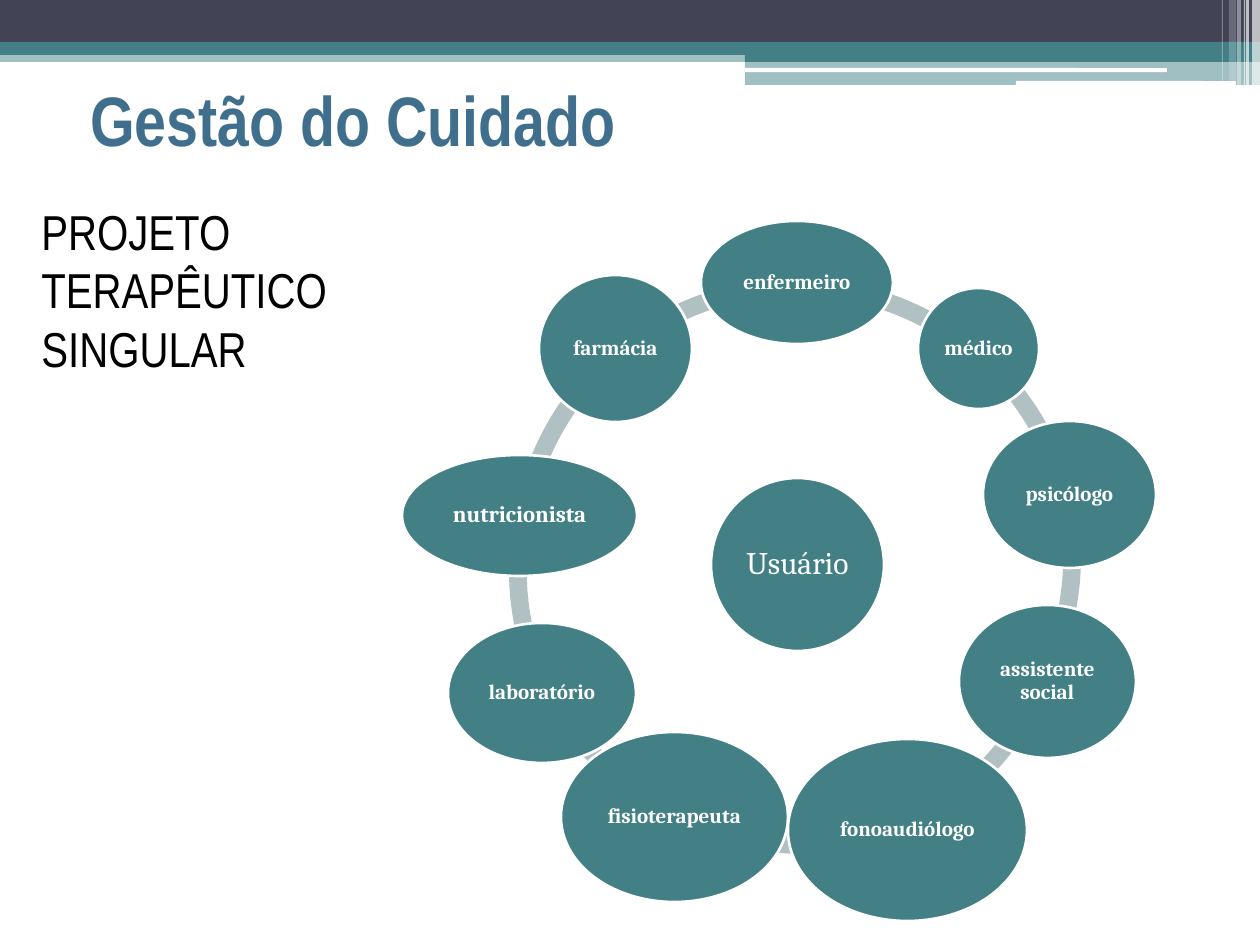
from lxml import etree
from pptx import Presentation
from pptx.dml.color import RGBColor
from pptx.enum import shapes, text
from pptx.oxml.ns import qn
from pptx.util import Pt

PX = 914400 / 126
W, H = 1260, 945
TEAL = RGBColor(0x43, 0x80, 0x86)
SLATE = RGBColor(0x42, 0x44, 0x56)
RING = RGBColor(0xB0, 0xC0, 0xC3)
BLUE = RGBColor(0x40, 0x6F, 0x8D)
WHITE = RGBColor(0xFF, 0xFF, 0xFF)
BLACK = RGBColor(0, 0, 0)
RECT = shapes.MSO_SHAPE.RECTANGLE
ROUND = shapes.MSO_SHAPE.ROUNDED_RECTANGLE

BARS = [
    (RECT, (0, 50, W, 12), TEAL, 50),
    (RECT, (0, 0, W, 43), SLATE, 100),
    (RECT, (0, 42, W, 13), TEAL, 100),
    (RECT, (745, 49, 515, 13), TEAL, 100),
    (RECT, (745, 61, 515, 24), TEAL, 50),
    (ROUND, (745, 68, 422, 4), WHITE, 100),
    (ROUND, (1016, 81, 220, 5), WHITE, 100),
]
STRIPES = [
    (1252, 8, 86, 65), (1246, 3, 86, 65), (1244, 1, 86, 60),
    (1237, 4, 86, 40), (1229, 7, 81, 20), (1222, 1, 81, 30),
]
RING_SIZE, RING_THICKNESS = 573, 0.031
ARCS = [
    (510, 278, 230, 270), (510, 278, 190, 230),
    (509, 284, 154.14, 191.11), (505, 273, 114.45, 151.99),
    (518, 281, 68.63, 117.44), (500, 289, 22.19, 64.64),
    (508, 270, 347.32, 26.25), (510, 277, 310.16, 345.75),
    (510, 278, 270, 310),
]
CENTER = ("Usuário", (711, 478, 173, 173), 18, False)
TEAM = [
    ("enfermeiro", (701, 221, 192, 123), 12),
    ("médico", (918, 288, 121, 121), 12),
    ("psicólogo", (983, 421, 173, 147), 12),
    ("assistente social", (959, 605, 177, 153), 12),
    ("fonoaudiólogo", (788, 739, 239, 182), 12),
    ("fisioterapeuta", (561, 732, 227, 170), 12),
    ("laboratório", (448, 623, 188, 140), 12),
    ("nutricionista", (402, 455, 235, 121), 13),
    ("farmácia", (539, 275, 153, 147), 12),
]
TITLE = ("Gestão do Cuidado", (78, 45, 1103, 147), 40, BLUE, True,
         text.MSO_ANCHOR.MIDDLE)
SUBJECT = ("PROJETO TERAPÊUTICO SINGULAR", (29, 195, 382, 190), 28, BLACK,
           False, text.MSO_ANCHOR.TOP)


def emu(box):
    return [round(v * PX) for v in box]


def add_shape(slide, kind, box, color, opacity=100):
    sp = slide.shapes.add_shape(kind, *emu(box))
    sp.shadow.inherit = False
    sp.fill.solid()
    sp.fill.fore_color.rgb = color
    sp.line.fill.background()
    if opacity < 100:
        clr = sp.fill._xPr.find(qn("a:solidFill"))[0]
        etree.SubElement(clr, qn("a:alpha")).set("val", str(opacity * 1000))
    return sp


def write(tf, words, size, font, color, bold):
    tf.word_wrap = True
    p = tf.paragraphs[0]
    p.text = words
    p.font.size = Pt(size)
    p.font.name = font
    p.font.bold = bold
    p.font.color.rgb = color
    return p


def add_node(slide, words, box, size, bold=True):
    sp = add_shape(slide, shapes.MSO_SHAPE.OVAL, box, TEAL)
    sp.line.color.rgb = WHITE
    sp.line.width = Pt(1.5)
    tf = sp.text_frame
    tf.margin_left = tf.margin_right = Pt(1.5)
    tf.margin_top = tf.margin_bottom = Pt(1.5)
    tf.vertical_anchor = text.MSO_ANCHOR.MIDDLE
    p = write(tf, words, size, "Cambria", WHITE, bold)
    p.alignment = text.PP_ALIGN.CENTER
    p.line_spacing = 0.9


def add_label(slide, words, box, size, color, bold, anchor):
    tf = slide.shapes.add_textbox(*emu(box)).text_frame
    tf.vertical_anchor = anchor
    write(tf, words, size, "Arial Narrow", color, bold)


def main():
    prs = Presentation()
    prs.slide_width, prs.slide_height = emu((W, H))
    slide = prs.slides.add_slide(prs.slide_layouts[6])

    for kind, box, color, opacity in BARS:
        add_shape(slide, kind, box, color, opacity)
    for x, w, h, opacity in STRIPES:
        add_shape(slide, RECT, (x, 0, w, h), WHITE, opacity)

    add_label(slide, *TITLE)
    for x, y, start, end in ARCS:
        sp = add_shape(slide, shapes.MSO_SHAPE.BLOCK_ARC,
                       (x, y, RING_SIZE, RING_SIZE), RING)
        for i, value in enumerate((start * 0.6, end * 0.6, RING_THICKNESS)):
            sp.adjustments[i] = value
    add_node(slide, *CENTER)
    for node in TEAM:
        add_node(slide, *node)
    add_label(slide, *SUBJECT)

    prs.save("out.pptx")


if __name__ == "__main__":
    main()
